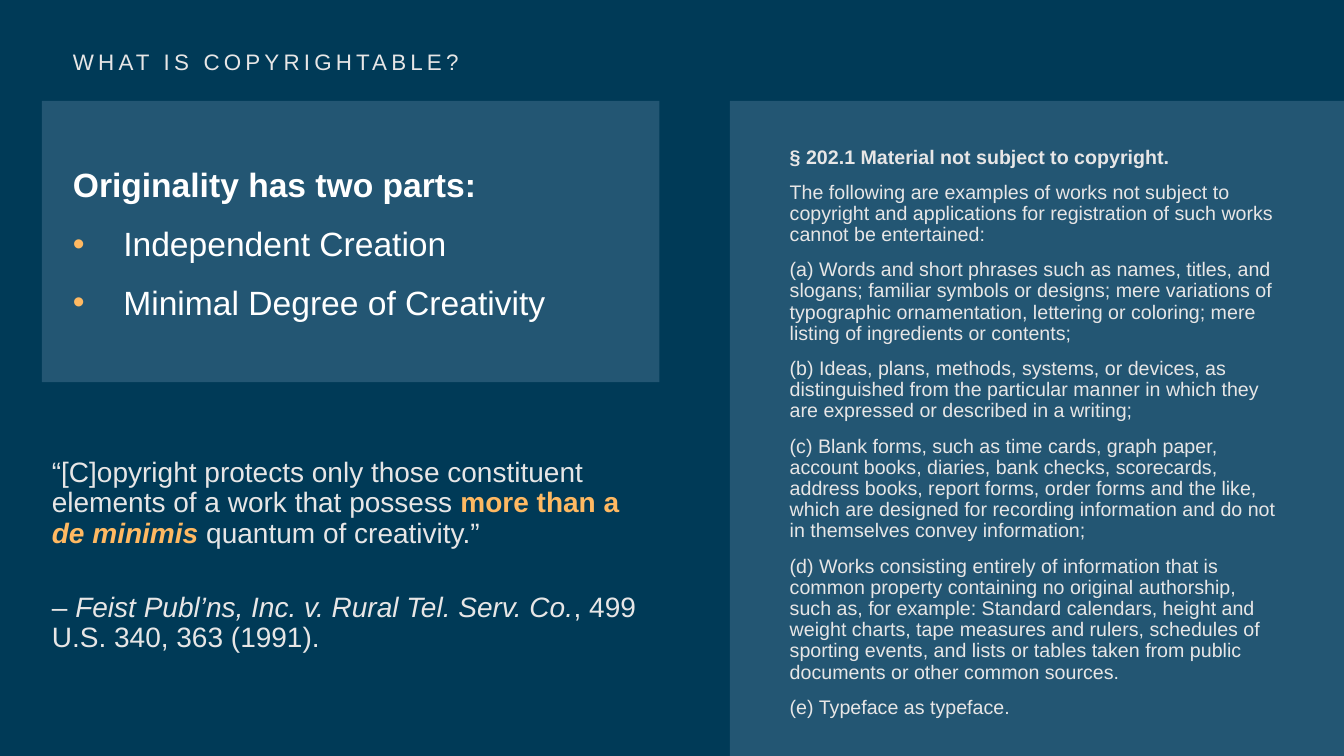
from lxml.etree import SubElement as Sub
from pptx import Presentation
from pptx.dml.color import RGBColor
from pptx.enum.shapes import MSO_SHAPE as Shape
from pptx.enum.text import MSO_ANCHOR as Anchor
from pptx.oxml.ns import qn
from pptx.util import Pt

NAVY = RGBColor(0x00, 0x3A, 0x57)
MIST = RGBColor(0xB3, 0xC9, 0xE3)
PALE = RGBColor(0xE7, 0xE6, 0xE6)
WHITE = RGBColor(0xFF, 0xFF, 0xFF)
GOLD = RGBColor(0xFF, 0xB9, 0x62)


class Deck:
    """Style and current slide."""

    font = "Arial"
    lead = 0.9

    def __init__(self):
        self.prs = Presentation()
        self.prs.slide_width, self.prs.slide_height = Pt(960), Pt(540)
        self.slide = self.prs.slides.add_slide(self.prs.slide_layouts[6])
        fill = self.slide.background.fill
        fill.solid()
        fill.fore_color.rgb = NAVY

    def panel(self, x, y, w, h):
        box = self.slide.shapes.add_shape(
            Shape.RECTANGLE, Pt(x), Pt(y), Pt(w), Pt(h))
        box.shadow.inherit = False
        box.line.fill.background()
        box.fill.solid()
        box.fill.fore_color.rgb = MIST
        color = box.fill._xPr.find(".//" + qn("a:srgbClr"))
        Sub(color, qn("a:alpha"), val="20000")

    def text(self, x, y, w, h, paras, size, color=PALE, before=10, after=0,
             anchor=Anchor.TOP):
        """Each paragraph is a list of (words, marks); marks: b, i, g for gold."""
        frame = self.slide.shapes.add_textbox(
            Pt(x), Pt(y), Pt(w), Pt(h)).text_frame
        frame.word_wrap = True
        frame.vertical_anchor = anchor
        for n, parts in enumerate(paras):
            para = frame.add_paragraph() if n else frame.paragraphs[0]
            para.line_spacing = self.lead
            para.space_before = Pt(before if n else 0)
            para.space_after = Pt(after)
            for words, marks in parts:
                run = para.add_run()
                run.text = words
                font = run.font
                font.name, font.size = self.font, Pt(size)
                font.bold, font.italic = "b" in marks, "i" in marks
                font.color.rgb = GOLD if "g" in marks else color
        return frame

    def bullet(self, para, indent):
        props = para._p.get_or_add_pPr()
        props.set("marL", str(Pt(indent)))
        props.set("indent", str(-Pt(indent)))
        tint = Sub(props, qn("a:buClr"))
        Sub(tint, qn("a:srgbClr"), val=str(GOLD))
        Sub(props, qn("a:buFont"), typeface=self.font)
        Sub(props, qn("a:buChar"), char="•")

    def track(self, frame, gap):
        for run in frame.paragraphs[0].runs:
            run.font._element.set("spc", str(gap * 100))


RULES = [
    "The following are examples of works not subject to copyright and applications for registration of such works cannot be entertained:",
    "(a) Words and short phrases such as names, titles, and slogans; familiar symbols or designs; mere variations of typographic ornamentation, lettering or coloring; mere listing of ingredients or contents;",
    "(b) Ideas, plans, methods, systems, or devices, as distinguished from the particular manner in which they are expressed or described in a writing;",
    "(c) Blank forms, such as time cards, graph paper, account books, diaries, bank checks, scorecards, address books, report forms, order forms and the like, which are designed for recording information and do not in themselves convey information;",
    "(d) Works consisting entirely of information that is common property containing no original authorship, such as, for example: Standard calendars, height and weight charts, tape measures and rulers, schedules of sporting events, and lists or tables taken from public documents or other common sources.",
    "(e) Typeface as typeface.",
]


def main():
    deck = Deck()

    # Title
    title = deck.text(45, 0, 868, 57.6, [[("WHAT IS COPYRIGHTABLE?", "")]],
                      16, anchor=Anchor.BOTTOM)
    deck.track(title, 3)

    # Two parts of originality
    deck.panel(30, 72, 441, 201)
    parts = deck.text(45, 117, 426, 156, [
        [("Originality has two parts:", "b")],
        [("Independent Creation", "")],
        [("Minimal Degree of Creativity", "")],
    ], 24, WHITE, after=6)
    for para in parts.paragraphs[1:]:
        deck.bullet(para, 36)

    # Quotation and its citation
    deck.text(30, 324, 441, 164, [
        [("“[C]opyright protects only those constituent elements of a work that possess ", ""),
         ("more than a ", "bg"), ("de minimis ", "big"),
         ("quantum of creativity.”", "")],
        [("– ", ""), ("Feist Publ’ns, Inc. v. Rural Tel. Serv. Co.", "i"),
         (", 499 U.S. 340, 363 (1991).", "")],
    ], 20, before=31.3)

    # Regulation
    deck.panel(521.3, 72, 438.7, 468)
    head = [("§ 202.1 Material not subject to copyright.", "b")]
    deck.text(557, 101.5, 366.5, 409,
              [head] + [[(rule, "")] for rule in RULES], 14)

    deck.prs.save("out.pptx")


if __name__ == "__main__":
    main()
